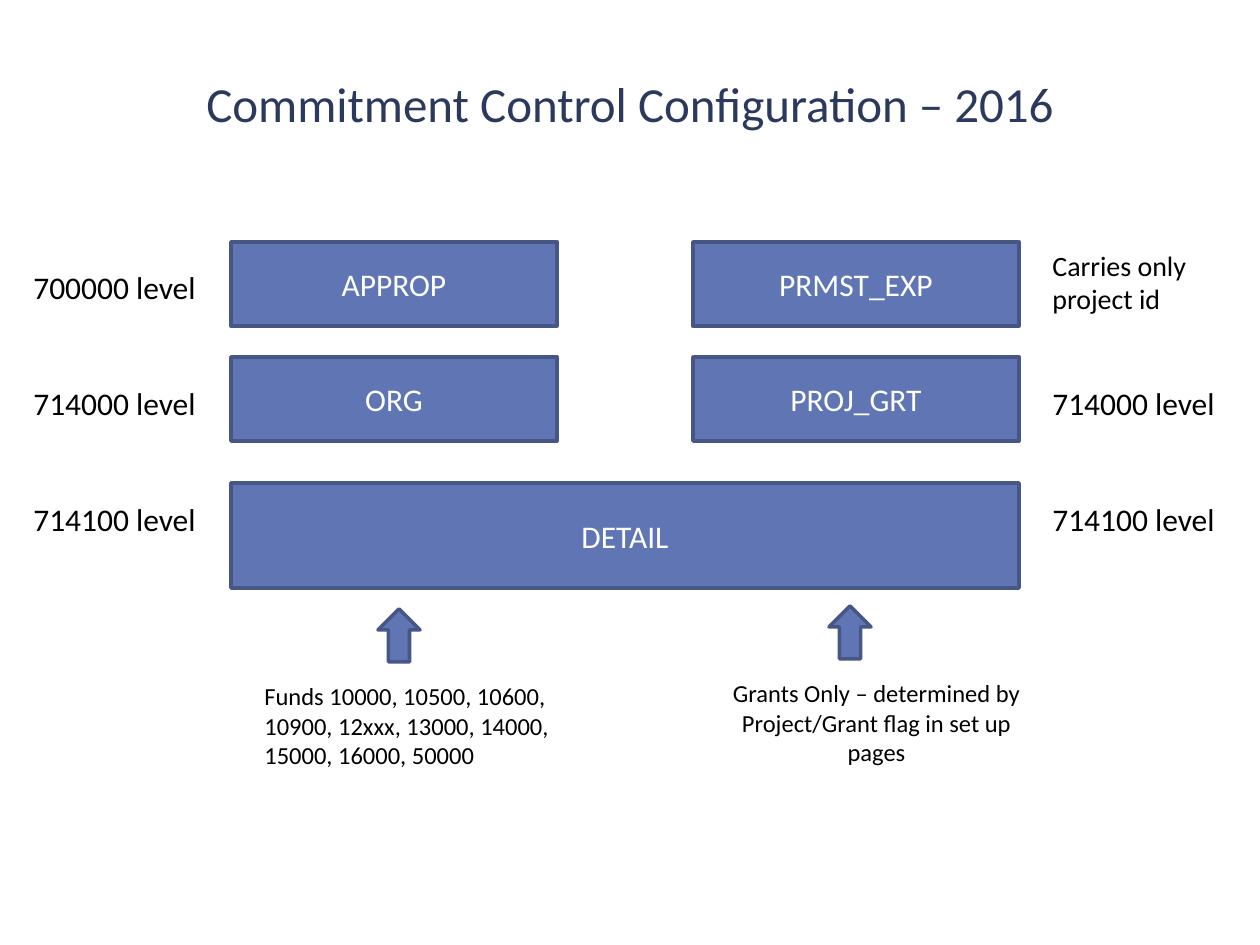
from dataclasses import dataclass

from pptx import Presentation
from pptx.dml.color import RGBColor
from pptx.enum.shapes import MSO_SHAPE as Preset
from pptx.enum.text import MSO_ANCHOR as Anchor, MSO_AUTO_SIZE as AutoSize, PP_ALIGN as Align
from pptx.shapes.autoshape import Shape
from pptx.slide import Slide
from pptx.util import Emu, Pt

EMU_PER_PX = 914400 / 126


@dataclass(frozen=True)
class Theme:
    font: str = "Calibri"
    title_color: RGBColor = RGBColor(0x2C, 0x39, 0x5E)
    text_color: RGBColor = RGBColor(0, 0, 0)
    ledger_text: RGBColor = RGBColor(0xFF, 0xFF, 0xFF)
    fill: RGBColor = RGBColor(0x60, 0x76, 0xB4)
    outline: RGBColor = RGBColor(0x47, 0x57, 0x85)
    outline_width: int = 2
    title_size: int = 28
    level_size: int = 18
    remark_size: int = 16
    note_size: int = 14


THEME = Theme()


@dataclass(frozen=True)
class Area:
    left: int
    top: int
    width: int
    height: int

    def emu(self) -> list[Emu]:
        return [px(v) for v in (self.left, self.top, self.width, self.height)]


@dataclass(frozen=True)
class Ledger:
    name: str
    area: Area


@dataclass(frozen=True)
class Label:
    text: str
    area: Area
    size: int = THEME.level_size
    align: Align = Align.LEFT


def px(value: int) -> Emu:
    return Emu(round(value * EMU_PER_PX))


def write(shape: Shape, text: str, size: int, color: RGBColor, align: Align, anchor: Anchor) -> None:
    frame = shape.text_frame
    frame.word_wrap = True
    frame.vertical_anchor = anchor
    para = frame.paragraphs[0]
    para.text = text
    para.alignment = align
    para.font.name = THEME.font
    para.font.size = Pt(size)
    para.font.color.rgb = color


def draw_preset(page: Slide, preset: Preset, area: Area) -> Shape:
    """Add a flat shape in the theme's fill and outline."""
    shape = page.shapes.add_shape(preset, *area.emu())
    shape.shadow.inherit = False
    shape.fill.solid()
    shape.fill.fore_color.rgb = THEME.fill
    shape.line.color.rgb = THEME.outline
    shape.line.width = Pt(THEME.outline_width)
    return shape


def draw_ledger(page: Slide, ledger: Ledger) -> None:
    box = draw_preset(page, Preset.RECTANGLE, ledger.area)
    write(box, ledger.name, THEME.level_size, THEME.ledger_text, Align.CENTER, Anchor.MIDDLE)


def draw_label(page: Slide, label: Label) -> None:
    box = page.shapes.add_textbox(*label.area.emu())
    write(box, label.text, label.size, THEME.text_color, label.align, Anchor.TOP)
    box.text_frame.auto_size = AutoSize.SHAPE_TO_FIT_TEXT


def draw_title(page: Slide, text: str, area: Area) -> None:
    box = page.shapes.add_textbox(*area.emu())
    write(box, text, THEME.title_size, THEME.title_color, Align.CENTER, Anchor.MIDDLE)


LEFT_COLUMN, RIGHT_COLUMN = 231, 693
COLUMN_WIDTH, ROW_HEIGHT = 326, 84
ROWS = (242, 357)
LEFT_LABELS, RIGHT_LABELS = 21, 1040
LABEL_TOP, LABEL_PITCH = 262, 116

LEDGERS = [
    Ledger(name, Area(left, top, COLUMN_WIDTH, ROW_HEIGHT))
    for left, names in ((LEFT_COLUMN, ("APPROP", "ORG")), (RIGHT_COLUMN, ("PRMST_EXP", "PROJ_GRT")))
    for name, top in zip(names, ROWS)
] + [Ledger("DETAIL", Area(LEFT_COLUMN, 483, RIGHT_COLUMN + COLUMN_WIDTH - LEFT_COLUMN, 105))]

LEVELS = ("700000 level", "714000 level", "714100 level")
LABELS = [
    Label(text, Area(left, LABEL_TOP + row * LABEL_PITCH, 189, 50))
    for left, first_row in ((LEFT_LABELS, 0), (RIGHT_LABELS, 1))
    for row, text in enumerate(LEVELS)
    if row >= first_row
] + [
    Label("Carries only project id", Area(RIGHT_LABELS, 242, 168, 81), THEME.remark_size),
    Label("Funds 10000, 10500, 10600, 10900, 12xxx, 13000, 14000, 15000, 16000, 50000",
          Area(252, 675, 315, 102), THEME.note_size),
    Label("Grants Only – determined by Project/Grant flag in set up pages",
          Area(703, 672, 347, 102), THEME.note_size, Align.CENTER),
]

ARROWS = [Area(378, 609, 42, 53), Area(829, 606, 42, 53)]


def main() -> None:
    deck = Presentation()
    deck.slide_width, deck.slide_height = px(1260), px(945)
    page = deck.slides.add_slide(deck.slide_layouts[6])
    draw_title(page, "Commitment Control Configuration – 2016", Area(63, 38, 1134, 130))
    for ledger in LEDGERS:
        draw_ledger(page, ledger)
    for label in LABELS:
        draw_label(page, label)
    for arrow in ARROWS:
        draw_preset(page, Preset.UP_ARROW, arrow)
    deck.save("out.pptx")


if __name__ == "__main__":
    main()
